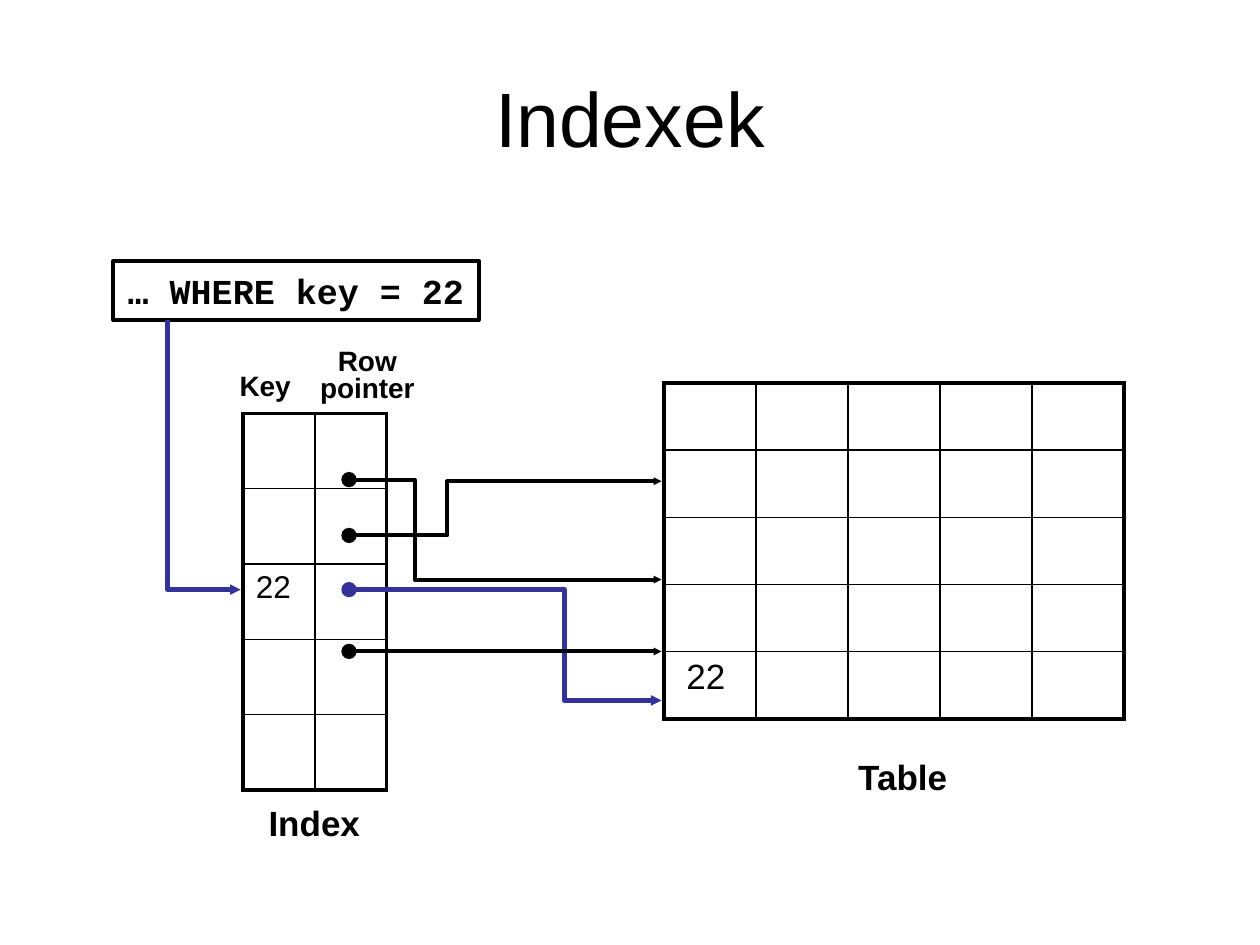
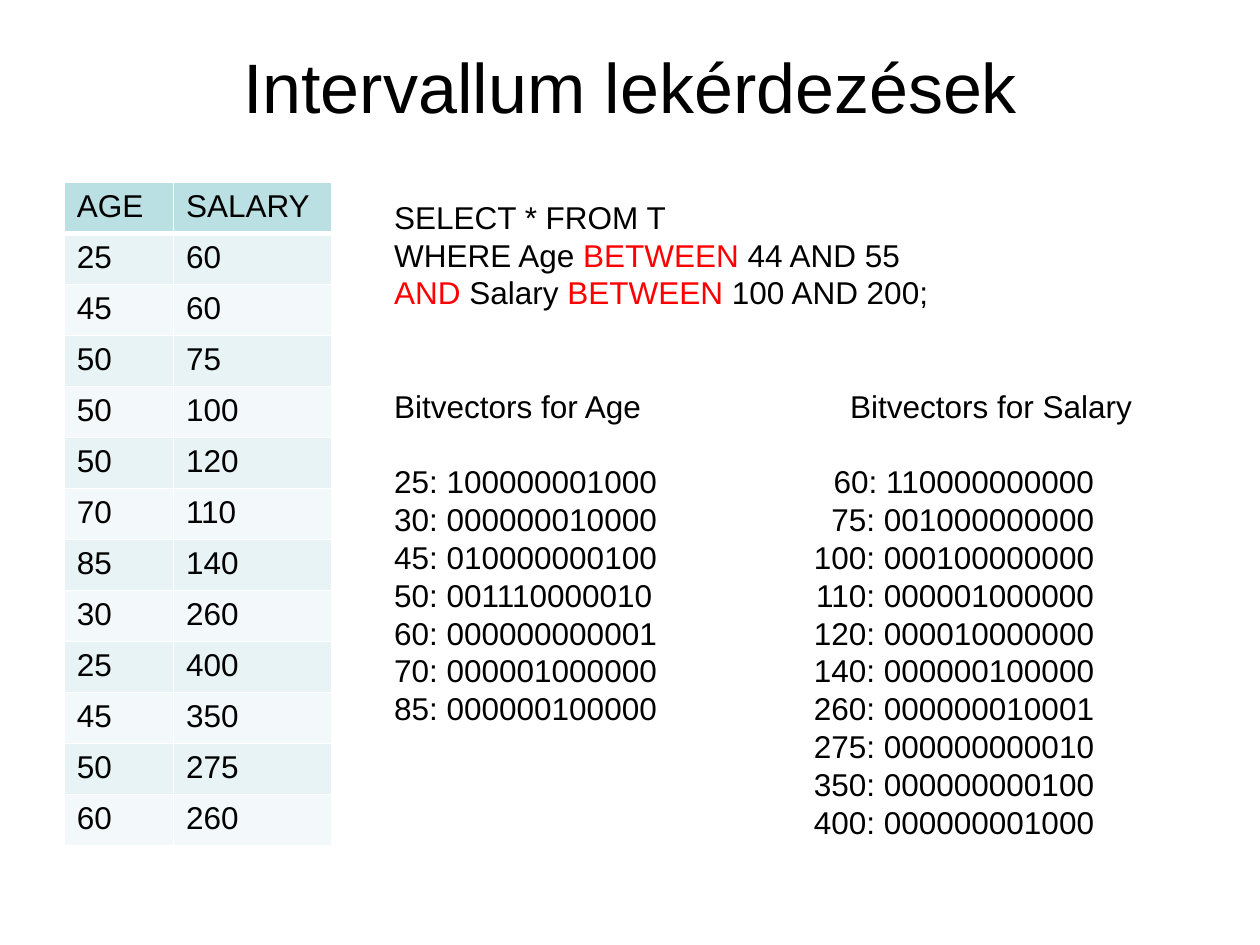
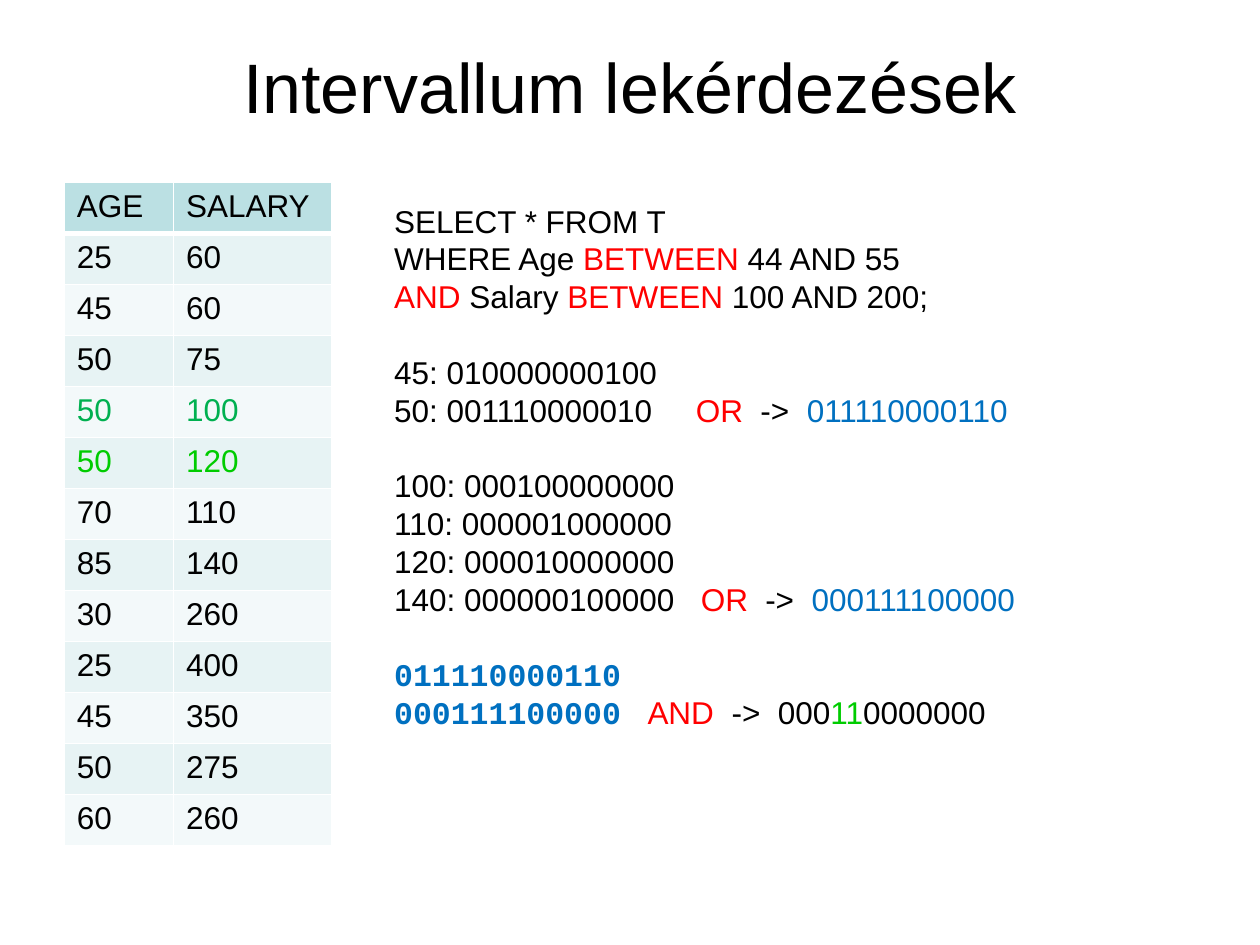
from dataclasses import dataclass

from lxml.etree import SubElement
from pptx import Presentation
from pptx.dml.color import RGBColor
from pptx.enum.shapes import MSO_CONNECTOR, MSO_SHAPE
from pptx.enum.text import MSO_ANCHOR, MSO_AUTO_SIZE, PP_ALIGN
from pptx.oxml.ns import qn
from pptx.util import Pt


@dataclass(frozen=True)
class Theme:
    font: str = "Arial"
    code_font: str = "Courier New"
    black: str = "000000"
    white: str = "FFFFFF"
    path_blue: str = "333399"
    keyword_red: str = "FF0000"
    result_blue: str = "0070C0"
    match_green: str = "00B050"
    bright_green: str = "00CC00"
    header_fill: str = "BBE0E3"
    band_fills: tuple = ("E7F3F4", "F3F9FA")
    title_size: float = 44
    long_title_size: float = 40
    label_size: float = 20
    body_size: float = 18
    heading_size: float = 16
    line_pitch: float = 21.6
    thin: float = 1
    medium: float = 2.25
    thick: float = 3


THEME = Theme()


@dataclass(frozen=True)
class Run:
    text: str
    color: str = THEME.black
    font: str = THEME.font
    bold: bool = False


@dataclass(frozen=True)
class Line:
    """One paragraph; gap counts the free lines above it, tabs are (position, alignment)."""
    runs: tuple
    gap: int = 0
    tabs: tuple = ()


class SlideBuilder:
    def __init__(self, presentation, theme):
        self.presentation = presentation
        self.theme = theme
        self.slide = None

    def new_slide(self, title, size, height):
        self.slide = self.presentation.slides.add_slide(self.presentation.slide_layouts[5])
        shape = self.slide.shapes.title
        shape.left, shape.top, shape.width, shape.height = Pt(36), Pt(21.6), Pt(648), Pt(height)
        frame = shape.text_frame
        frame.auto_size = MSO_AUTO_SIZE.NONE
        frame.vertical_anchor = MSO_ANCHOR.MIDDLE
        frame.paragraphs[0].alignment = PP_ALIGN.CENTER
        self.add_run(frame.paragraphs[0], Run(title), size)

    def add_run(self, paragraph, content, size):
        run = paragraph.add_run()
        run.text = content.text
        run.font.name = content.font
        run.font.size = Pt(size)
        run.font.bold = content.bold
        run.font.color.rgb = RGBColor.from_string(content.color)

    def write_label(self, shape, text, size, font=None, spacing=None):
        frame = shape.text_frame
        frame.word_wrap = False
        paragraph = frame.paragraphs[0]
        paragraph.alignment = PP_ALIGN.CENTER
        paragraph.space_before = Pt(2)
        paragraph.line_spacing = spacing
        for index, part in enumerate(text.split("\n")):
            if index:
                paragraph.add_line_break()
            self.add_run(paragraph, Run(part, font=font or self.theme.font, bold=True), size)

    def label(self, text, box, size, spacing=None):
        shape = self.slide.shapes.add_textbox(*map(Pt, box))
        self.write_label(shape, text, size, spacing=spacing)

    def code_box(self, text, box):
        shape = self.slide.shapes.add_shape(MSO_SHAPE.RECTANGLE, *map(Pt, box))
        shape.shadow.inherit = False
        shape.fill.background()
        self.style_line(shape, self.theme.black, self.theme.medium)
        shape.text_frame.vertical_anchor = MSO_ANCHOR.MIDDLE
        self.write_label(shape, text, self.theme.label_size, self.theme.code_font)

    def style_line(self, shape, color, width):
        shape.line.color.rgb = RGBColor.from_string(color)
        shape.line.width = Pt(width)

    def dot(self, center_x, center_y, color, diameter=8.8):
        left, top = center_x - diameter / 2, center_y - diameter / 2
        shape = self.slide.shapes.add_shape(
            MSO_SHAPE.OVAL, Pt(left), Pt(top), Pt(diameter), Pt(diameter))
        shape.shadow.inherit = False
        shape.fill.solid()
        shape.fill.fore_color.rgb = RGBColor.from_string(color)
        shape.line.fill.background()

    def arrow(self, points, color, width):
        """Draw a straight connector for two points, an open outline for more."""
        points = [(Pt(x), Pt(y)) for x, y in points]
        if len(points) == 2:
            shape = self.slide.shapes.add_connector(MSO_CONNECTOR.STRAIGHT, *points[0], *points[1])
            SubElement(shape._element.spPr, qn("a:effectLst"))
        else:
            builder = self.slide.shapes.build_freeform(*points[0])
            builder.add_line_segments(points[1:], close=False)
            shape = builder.convert_to_shape()
            shape.shadow.inherit = False
            shape.fill.background()
        self.style_line(shape, color, width)
        SubElement(shape.line._get_or_add_ln(), qn("a:tailEnd"), type="triangle", w="sm", len="sm")

    def table(self, left, top, column_widths, row_height, row_count):
        frame = self.slide.shapes.add_table(
            row_count, len(column_widths), Pt(left), Pt(top),
            Pt(sum(column_widths)), Pt(row_height * row_count))
        table = frame.table
        table.first_row = table.horz_banding = False
        for column, width in zip(table.columns, column_widths):
            column.width = Pt(width)
        for row in table.rows:
            row.height = Pt(row_height)
        return table

    def cell_borders(self, cell, color, widths):
        """Set the widths of the left, right, top and bottom borders."""
        properties = cell._tc.get_or_add_tcPr()
        for side, width in zip("LRTB", widths):
            line = SubElement(properties, qn(f"a:ln{side}"), w=str(Pt(width)))
            fill = SubElement(line, qn("a:solidFill"))
            SubElement(fill, qn("a:srgbClr"), val=color)

    def grid(self, left, top, column_widths, row_height, row_count, key_row, key, key_size):
        """Draw an empty table with a heavy frame and one key in its first column."""
        theme = self.theme
        table = self.table(left, top, column_widths, row_height, row_count)
        last_row, last_column = row_count - 1, len(column_widths) - 1
        for row in range(row_count):
            for column in range(len(column_widths)):
                cell = table.cell(row, column)
                on_frame = (column == 0, column == last_column, row == 0, row == last_row)
                self.cell_borders(cell, theme.black,
                                  [theme.medium if edge else theme.thin for edge in on_frame])
                cell.fill.background()
        self.add_run(table.cell(key_row, 0).text_frame.paragraphs[0], Run(key), key_size)

    def data_table(self, rows, row_colors):
        theme = self.theme
        table = self.table(36.72, 104.4, (62.4, 90.5), 29.16, len(rows))
        for row, values in enumerate(rows):
            fill = theme.band_fills[(row - 1) % 2] if row else theme.header_fill
            bottom = theme.thin if row else theme.thick
            for column, value in enumerate(values):
                cell = table.cell(row, column)
                self.cell_borders(cell, theme.white, (theme.thin, theme.thin, theme.thin, bottom))
                cell.fill.solid()
                cell.fill.fore_color.rgb = RGBColor.from_string(fill)
                content = Run(str(value), row_colors.get(row, theme.black))
                self.add_run(cell.text_frame.paragraphs[0], content, theme.body_size)

    def text_lines(self, lines, box):
        frame = self.slide.shapes.add_textbox(*map(Pt, box)).text_frame
        frame.word_wrap = True
        for index, line in enumerate(lines):
            paragraph = frame.add_paragraph() if index else frame.paragraphs[0]
            paragraph.line_spacing = Pt(self.theme.line_pitch)
            paragraph.space_before = Pt(line.gap * self.theme.line_pitch)
            if line.tabs:
                tab_list = SubElement(paragraph._p.get_or_add_pPr(), qn("a:tabLst"))
                for position, alignment in line.tabs:
                    SubElement(tab_list, qn("a:tab"), pos=str(Pt(position)), algn=alignment)
            for content in line.runs:
                self.add_run(paragraph, content, self.theme.body_size)


AGE_SALARY = (
    ("AGE", "SALARY"), (25, 60), (45, 60), (50, 75), (50, 100), (50, 120), (70, 110),
    (85, 140), (30, 260), (25, 400), (45, 350), (50, 275), (60, 260))

BETWEEN = Run("BETWEEN", THEME.keyword_red)
QUERY = [
    Line((Run("SELECT * FROM T"),)),
    Line((Run("WHERE Age "), BETWEEN, Run(" 44 AND 55"))),
    Line((Run("AND", THEME.keyword_red), Run(" Salary "), BETWEEN, Run(" 100 AND 200;"))),
]

AGE_VECTORS = (
    "25: 100000001000", "30: 000000010000", "45: 010000000100", "50: 001110000010",
    "60: 000000000001", "70: 000001000000", "85: 000000100000")
SALARY_VECTORS = (
    "60: 110000000000", "75: 001000000000", "100: 000100000000", "110: 000001000000",
    "120: 000010000000", "140: 000000100000", "260: 000000010001", "275: 000000000010",
    "350: 000000000100", "400: 000000001000")


def index_slide(builder):
    theme = builder.theme
    builder.new_slide("Indexek", theme.title_size, 90)
    builder.grid(138.96, 236.16, (41.04,) * 2, 43.06, 5, 2, "22", theme.body_size)
    builder.grid(379.44, 218.88, (52.56,) * 5, 38.4, 5, 4, " 22", theme.label_size)
    builder.label("Index", (146.16, 454.32, 66.96, 30.96), theme.label_size)
    builder.label("Table", (482.4, 428.4, 66.96, 30.96), theme.label_size)
    builder.label("Key", (120.24, 207.36, 62.64, 26.64), theme.heading_size)
    builder.label("Row\npointer", (175.68, 196.56, 68.4, 38.16), theme.heading_size, 0.8)
    builder.code_box("… WHERE key = 22", (64.8, 149.04, 208.8, 33.84))

    dot_x, table_x = 199.44, 378
    pointers = (  # start height, bend, end height, colour, width
        (274.1, 236.9, 331.2, theme.black, theme.medium),
        (306, 255.6, 275, theme.black, theme.medium),
        (336.96, 322.56, 400.3, theme.path_blue, theme.thick),
        (372.24, None, 372.24, theme.black, theme.medium))
    for start_y, bend_x, end_y, color, width in pointers:
        bends = [(bend_x, start_y), (bend_x, end_y)] if bend_x else []
        builder.arrow([(dot_x, start_y), *bends, (table_x, end_y)], color, width)
        builder.dot(dot_x, start_y, color)
    builder.arrow([(95.76, 182.88), (95.76, 336.96), (137.52, 336.96)],
                  theme.path_blue, theme.thick)


def interval_slide(builder, lines, top, row_colors):
    builder.new_slide("Intervallum lekérdezések", builder.theme.long_title_size, 54)
    builder.data_table(AGE_SALARY, row_colors)
    builder.text_lines(QUERY + lines, (218.16, top, 436.32, 400))


def bitvector_lines():
    heading = Line((Run("Bitvectors for Age\tBitvectors for Salary"),), 2, ((260.6, "l"),))
    lines = [heading]
    for index, salary in enumerate(SALARY_VECTORS):
        age = AGE_VECTORS[index] if index < len(AGE_VECTORS) else ""
        lines.append(Line((Run(f"{age}\t{salary}"),), 0 if index else 1, ((400, "r"),)))
    return lines


def operation(operand, operator, result, start, arrow_offset):
    """Line up operand, operator, arrow and result on tab stops."""
    stops = (start, start + arrow_offset, start + arrow_offset + 26.5)
    runs = (operand, Run("\t"), Run(operator, THEME.keyword_red), Run("\t->\t"), *result)
    return Line(runs, tabs=tuple((stop, "l") for stop in stops))


def evaluation_lines():
    age_result, salary_result = "011110000110", "000111100000"

    def code(text):
        return Run(text, THEME.result_blue, THEME.code_font, True)

    return [
        Line((Run(AGE_VECTORS[2]),), 1),
        operation(Run(AGE_VECTORS[3]), "OR", (Run(age_result, THEME.result_blue),), 172.5, 36.8),
        *(Line((Run(vector),), 0 if index else 1)
          for index, vector in enumerate(SALARY_VECTORS[2:5])),
        operation(Run(SALARY_VECTORS[5]), "OR", (Run(salary_result, THEME.result_blue),),
                  175.3, 36.8),
        Line((code(age_result),), 1),
        operation(code(salary_result), "AND",
                  (Run("000"), Run("11", THEME.bright_green), Run("0000000")), 144.8, 48),
    ]


def main():
    presentation = Presentation()
    presentation.slide_width, presentation.slide_height = Pt(720), Pt(540)
    builder = SlideBuilder(presentation, THEME)
    index_slide(builder)
    interval_slide(builder, bitvector_lines(), 109.44, {})
    interval_slide(builder, evaluation_lines(), 111.6,
                   {4: THEME.match_green, 5: THEME.bright_green})
    presentation.save("out.pptx")


if __name__ == "__main__":
    main()
